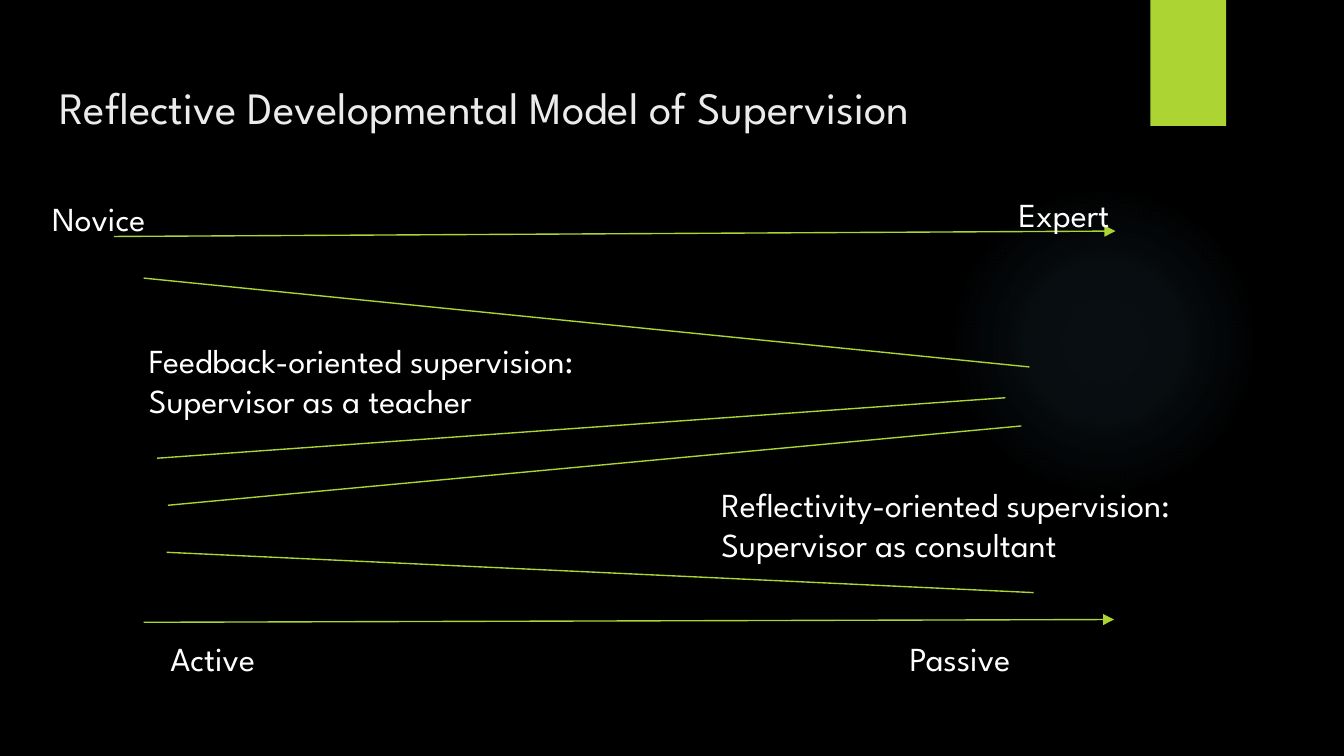
from lxml import etree
from pptx import Presentation
from pptx.dml.color import RGBColor
from pptx.enum.shapes import MSO_CONNECTOR, MSO_SHAPE
from pptx.enum.text import MSO_ANCHOR, MSO_AUTO_SIZE, PP_ALIGN
from pptx.oxml import parse_xml
from pptx.oxml.ns import qn
from pptx.util import Pt

STRAIGHT = MSO_CONNECTOR.STRAIGHT
OVAL, RECTANGLE = MSO_SHAPE.OVAL, MSO_SHAPE.RECTANGLE
TOP, LEFT, NO_FIT = MSO_ANCHOR.TOP, PP_ALIGN.LEFT, MSO_AUTO_SIZE.NONE
DRAWING = "http://schemas.openxmlformats.org/drawingml/2006/main"
FONT, GREEN, WHITE, PALE, BLACK, BLUE = (
    "League Spartan", "ACD433", "FFFFFF", "EBEBEB", "000000", "7AC4F0")
INSET = 7.2

ARROWS = [((1.2, 6.7), (537.6, 3.8)), ((17, 213.4), (536.9, 211.9))]
BANDS = [
    ((17, 29), (491.5, 76.6)),
    ((24.2, 125.5), (478.6, 93.1)),
    ((30, 150.7), (487.2, 108.2)),
    ((29.3, 175.9), (493.7, 197.5)),
]
LABELS = [
    ((0.9, 2.6, 86.4, 23), ["Novice"]),
    ((518.6, 0.5, 86.4, 26.6), ["Expert"]),
    ((64.2, 238.8, 553, 64.8), ["Active\tPassive"]),
    ((52.7, 79, 553, 64.8),
     ["Feedback-oriented supervision:", "Supervisor as a teacher"]),
    ((359.4, 156, 321.1, 64.8),
     ["Reflectivity-oriented supervision:", "Supervisor as consultant"]),
]
PASSIVE_TAB = 396


def color(value):
    """Return the colour for a hex string."""
    return RGBColor.from_string(value)


def set_values(target, values):
    """Set each named attribute on the target."""
    for name, value in values.items():
        setattr(target, name, value)


def write(shape, lines, size, ink):
    """Fill a text shape with left-aligned lines."""
    frame = shape.text_frame
    set_values(frame, {
        "word_wrap": True, "auto_size": NO_FIT, "vertical_anchor": TOP,
        "margin_left": Pt(INSET), "margin_right": Pt(INSET),
        "margin_top": Pt(INSET), "margin_bottom": Pt(INSET)})
    for index, line in enumerate(lines):
        para = frame.paragraphs[0] if index == 0 else frame.add_paragraph()
        set_values(para, {"alignment": LEFT, "space_before": Pt(0)})
        if "\t" in line:
            tabs = etree.SubElement(para._p.get_or_add_pPr(), qn("a:tabLst"))
            etree.SubElement(tabs, qn("a:tab"), pos=str(Pt(PASSIVE_TAB)), algn="l")
        span = para.add_run()
        span.text = line
        set_values(span.font, {"name": FONT, "size": Pt(size), "bold": False})
        span.font.color.rgb = color(ink)


def add_plain_shape(page, kind, box):
    """Add a preset shape with no line or shadow."""
    shape = page.shapes.add_shape(kind, *map(Pt, box))
    shape.shadow.inherit = False
    shape.line.fill.background()
    return shape


def add_glow(page, box):
    """Add a faint circle that fades out from its centre."""
    glow = add_plain_shape(page, OVAL, box)
    stops = "".join(
        f'<a:gs pos="{place * 1000}"><a:srgbClr val="{BLUE}">'
        f'<a:alpha val="{alpha * 1000}"/></a:srgbClr></a:gs>'
        for place, alpha in [(0, 7), (36, 6), (69, 0)])
    fill = parse_xml(
        f'<a:gradFill xmlns:a="{DRAWING}" rotWithShape="1"><a:gsLst>{stops}</a:gsLst>'
        '<a:path path="circle"><a:fillToRect l="50000" t="50000" r="50000" b="50000"/>'
        '</a:path></a:gradFill>')
    glow._element.spPr.find(qn("a:prstGeom")).addnext(fill)


def add_ribbon(page, box):
    """Add the solid green ribbon."""
    ribbon = add_plain_shape(page, RECTANGLE, box)
    ribbon.fill.solid()
    ribbon.fill.fore_color.rgb = color(GREEN)


def add_title(page, box):
    """Place and format the title placeholder."""
    title = page.shapes.title
    set_values(title, dict(zip(("left", "top", "width", "height"), map(Pt, box))))
    write(title, ["Reflective Developmental Model of Supervision"], 24, PALE)


def add_line(page, origin, start, end, arrow):
    """Draw a thin green line, with an arrowhead if asked."""
    points = [Pt(base + shift) for point in (start, end)
              for base, shift in zip(origin, point)]
    line = page.shapes.add_connector(STRAIGHT, *points)
    line.line.width = Pt(0.75)
    line.line.color.rgb = color(GREEN)
    if arrow:
        etree.SubElement(line.line._get_or_add_ln(), qn("a:tailEnd"), type="triangle")
    etree.SubElement(line._element.spPr, qn("a:effectLst"))


def add_diagram(page, box):
    """Draw the two axes and the lines that bound the supervision bands."""
    for lines, arrow in ((ARROWS, True), (BANDS, False)):
        for start, end in lines:
            add_line(page, box[:2], start, end, arrow)


def add_labels(page, box):
    """Add the axis ends and the names of the bands."""
    for (left, top, width, height), lines in LABELS:
        label = page.shapes.add_textbox(
            Pt(box[0] + left), Pt(box[1] + top), Pt(width), Pt(height))
        write(label, lines, 18, WHITE)


def main():
    """Build and save the deck."""
    deck = Presentation()
    set_values(deck, {"slide_width": Pt(720), "slide_height": Pt(405)})
    page = deck.slides.add_slide(deck.slide_layouts[5])
    page.background.fill.solid()
    page.background.fill.fore_color.rgb = color(BLACK)
    add_glow(page, (508.3, 99.4, 166.3, 166.3))
    add_ribbon(page, (616.3, 0, 40.5, 67.5))
    add_title(page, (24.5, 35.3, 671, 45.4))
    add_diagram(page, (60, 120, 540, 216))
    add_labels(page, (20, 96, 680, 304))
    deck.save("out.pptx")


if __name__ == "__main__":
    main()
